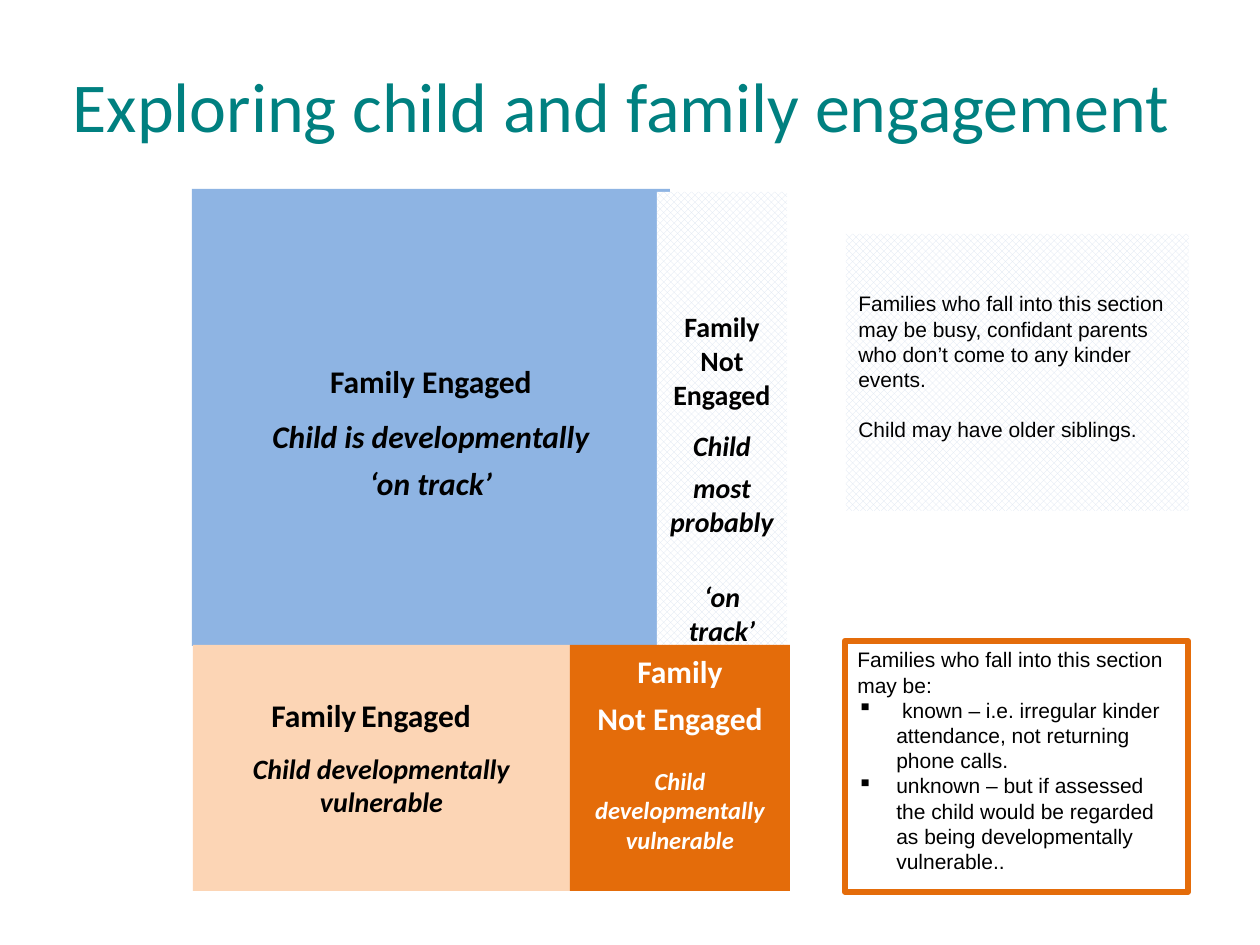
import pptx
import pptx.util
import pptx.dml.color
import pptx.enum.dml
import pptx.enum.shapes
import pptx.enum.text
import pptx.oxml
import pptx.oxml.ns

PX = 914400 // 126
BLACK, WHITE, ORANGE = "000000", "FFFFFF", "E46C0A"
PALE = "DBE5F1"
TITLE = "Exploring child and family engagement"

# Text style: font, size, bold, italic, colour
HEAD = ("Calibri", 18, True, False, BLACK)
HEAD_IT = ("Calibri", 18, True, True, BLACK)
MID = ("Calibri", 16, True, False, BLACK)
MID_IT = ("Calibri", 16, True, True, BLACK)
GAP = ("Calibri", 12, True, False, BLACK)
LIGHT = ("Calibri", 18, True, False, WHITE)
LIGHT_IT = ("Calibri", 14, True, True, WHITE)
NOTE = ("Arial", 12, False, False, BLACK)

# box: left, top, width, height; inset: space above the text (px)
# paras: (runs, layout); before and after in points, indent in px
BOXES = [
    dict(box=(192, 189, 478, 457), fill="8EB4E3", inset=173, paras=[
        ([("Family Engaged", HEAD)], dict(after=5)),
        ([("Child is developmentally", HEAD_IT)], dict(before=5)),
        ([("‘on track’", HEAD_IT)], dict(before=5)),
    ]),
    dict(box=(657, 192, 130, 457), pattern=PALE, inset=118, paras=[
        ([("Family Not Engaged", MID)], dict(after=5)),
        ([("Child", MID_IT)], dict(before=5)),
        ([("most probably", MID_IT)], dict(before=5)),
        ([("‘on track’", MID_IT)], dict(before=24)),
    ]),
    dict(box=(193, 645, 377, 246), fill="FCD5B5", inset=51, paras=[
        ([("Family", HEAD), (" ", GAP), ("Engaged", HEAD)],
         dict(after=5, left=66)),
        ([("Child developmentally vulnerable", MID_IT)], dict(before=5)),
    ]),
    dict(box=(570, 645, 220, 246), fill=ORANGE, inset=7, paras=[
        ([("Family", LIGHT)], {}),
        ([("Not Engaged", LIGHT)], dict(before=5)),
        ([("Child", LIGHT_IT)], dict(before=17)),
        ([("developmentally vulnerable", LIGHT_IT)], {}),
    ]),
    dict(box=(846, 234, 343, 277), pattern=PALE, inset=57, paras=[
        ([("Families who fall into this section may be busy, confidant "
           "parents who don’t come to any kinder events.", NOTE)],
         dict(left=0)),
        ([("Child may have older siblings.", NOTE)],
         dict(left=0, before=14)),
    ]),
    dict(box=(845, 641, 343, 251), line=ORANGE, inset=6, paras=[
        ([("Families who fall into this section may be:", NOTE)],
         dict(left=0)),
        ([(" known – i.e. irregular kinder attendance, not returning "
           "phone calls.", NOTE)], dict(left=39, bullet="▪")),
        ([("unknown – but if assessed the child would be regarded as "
           "being developmentally vulnerable..", NOTE)],
         dict(left=39, bullet="▪")),
    ]),
]


def color(text):
    return pptx.dml.color.RGBColor.from_string(text)


def add_run(para, text, style):
    run = para.add_run()
    run.text = text
    font = run.font
    font.name, size, font.bold, font.italic, tint = style
    font.size = pptx.util.Pt(size)
    font.color.rgb = color(tint)


def indent(para, left, bullet):
    """Set the left margin, with a hanging bullet when one is given."""
    props = para._p.get_or_add_pPr()
    props.set("marL", str(left * PX))
    if bullet:
        props.set("indent", str(-left * PX))
        mark = pptx.oxml.parse_xml(
            f'<a:buChar {pptx.oxml.ns.nsdecls("a")} char="{bullet}"/>')
        props.append(mark)


def fill_text(frame, paras):
    align = pptx.enum.text.PP_ALIGN
    for i, (runs, look) in enumerate(paras):
        para = frame.paragraphs[0] if i == 0 else frame.add_paragraph()
        para.alignment = align.LEFT if "left" in look else align.CENTER
        para.space_before = pptx.util.Pt(look.get("before", 0))
        para.space_after = pptx.util.Pt(look.get("after", 0))
        if "left" in look:
            indent(para, look["left"], look.get("bullet"))
        for text, style in runs:
            add_run(para, text, style)


def add_box(slide, item):
    shape = slide.shapes.add_shape(
        pptx.enum.shapes.MSO_SHAPE.RECTANGLE, *(n * PX for n in item["box"]))
    shape.shadow.inherit = False
    if "fill" in item:
        shape.fill.solid()
        shape.fill.fore_color.rgb = color(item["fill"])
    elif "pattern" in item:
        shape.fill.patterned()
        shape.fill.pattern = pptx.enum.dml.MSO_PATTERN.SOLID_DIAMOND
        shape.fill.fore_color.rgb = color(item["pattern"])
        shape.fill.back_color.rgb = color(WHITE)
    else:
        shape.fill.background()
    if "line" in item:
        shape.line.color.rgb = color(item["line"])
        shape.line.width = pptx.util.Pt(3.5)
    else:
        shape.line.fill.background()
    frame = shape.text_frame
    frame.word_wrap = True
    frame.vertical_anchor = pptx.enum.text.MSO_ANCHOR.TOP
    frame.margin_top = item["inset"] * PX
    frame.margin_bottom = 0
    fill_text(frame, item["paras"])


def main():
    deck = pptx.Presentation()
    deck.slide_width, deck.slide_height = 1260 * PX, 945 * PX
    slide = deck.slides.add_slide(deck.slide_layouts[5])
    title = slide.shapes.title
    title.left, title.top, title.width, title.height = (
        n * PX for n in (54, 26, 1134, 158))
    frame = title.text_frame
    frame.auto_size = pptx.enum.text.MSO_AUTO_SIZE.NONE
    frame.vertical_anchor = pptx.enum.text.MSO_ANCHOR.MIDDLE
    fill_text(frame, [
        ([(TITLE, ("Calibri", 40, False, False, "008080"))], {})])
    for item in BOXES:
        add_box(slide, item)
    deck.save("out.pptx")


if __name__ == "__main__":
    main()
